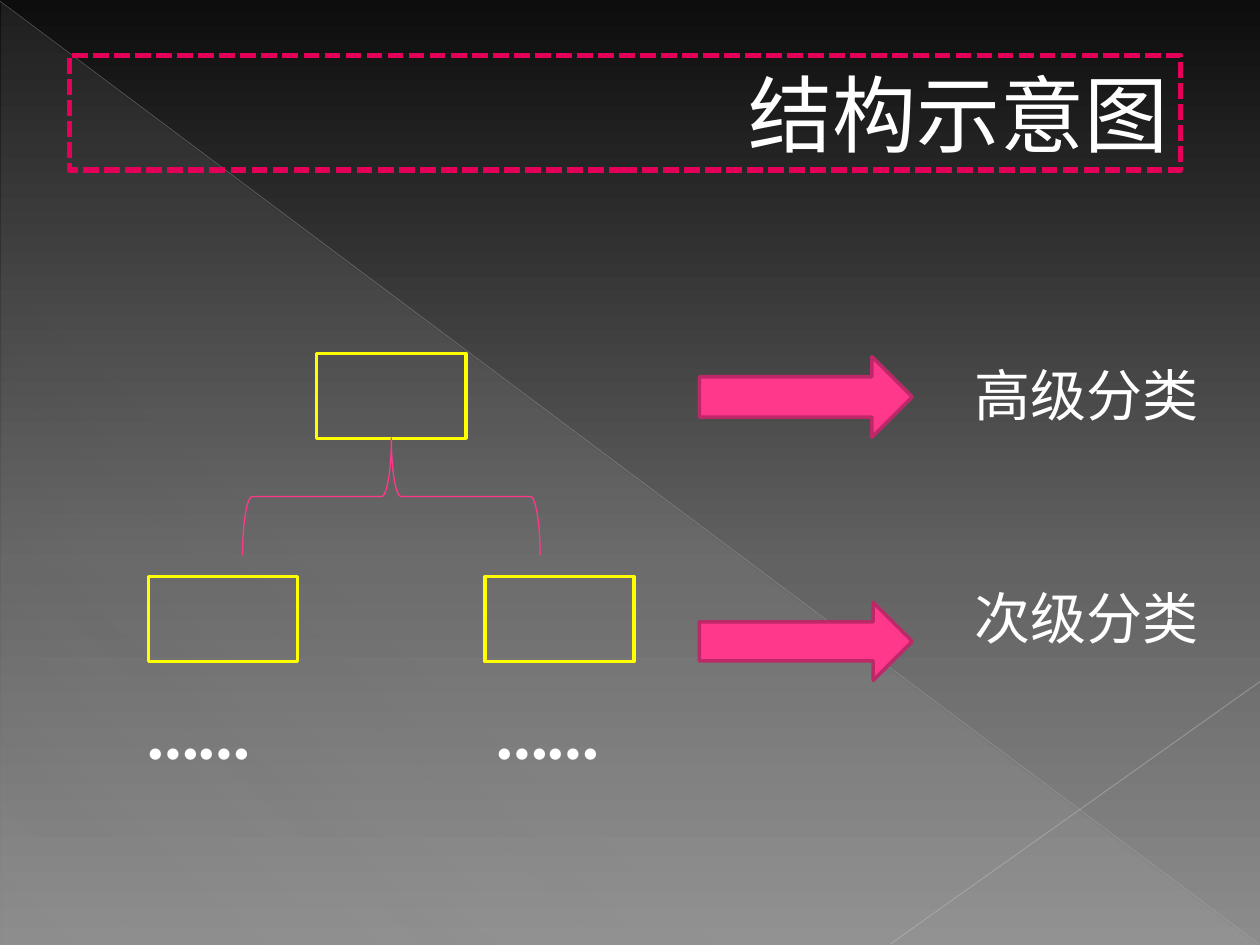
from lxml.etree import SubElement
from pptx import Presentation
from pptx.dml.color import RGBColor
from pptx.enum.dml import MSO_LINE
from pptx.enum.shapes import MSO_CONNECTOR, MSO_SHAPE
from pptx.enum.text import MSO_ANCHOR, PP_ALIGN
from pptx.oxml.ns import qn
from pptx.util import Pt

WHITE = RGBColor(0xFF, 0xFF, 0xFF)
YELLOW = RGBColor(0xFF, 0xFF, 0x00)
PINK = RGBColor(0xFF, 0x38, 0x8C)
DARK_PINK = RGBColor(0xBD, 0x29, 0x68)
CRIMSON = RGBColor(0xE4, 0x00, 0x59)
SILVER = RGBColor(0xBF, 0xBF, 0xBF)
LIGHT_SILVER = RGBColor(0xC6, 0xC6, 0xC6)
PALE = RGBColor(0xD2, 0xD2, 0xD2)

# position %, colour, opacity %
BACKGROUND = [(0, RGBColor(0x0D, 0x0D, 0x0D), 100),
              (60, RGBColor(0x62, 0x62, 0x62), 100),
              (100, RGBColor(0x8C, 0x8C, 0x8C), 100)]
SHEEN = [(0, PALE, 10), (70, PALE, 8), (100, PALE, 1)]

# start, end, colour, width, opacity %
DIAGONALS = [((0, 0.7), (719.3, 539.3), SILVER, 0.39, 35),
             ((720, 389.5), (509, 539.3), LIGHT_SILVER, 0.47, 45)]

TITLE = "结构示意图"
TITLE_FRAME = (39.6, 31.7, 635, 65.5)
BOX_W, BOX_H = 85.2, 48.5
LEFT_X, RIGHT_X = 84.8, 277.2
TOP_Y, LOWER_Y = 202, 329.5
BOXES = [(LEFT_X, LOWER_Y), (RIGHT_X, LOWER_Y),
         ((LEFT_X + RIGHT_X) / 2, TOP_Y)]
BRACE = (190.1, 198.7, 67, 170)
ARROWS = [(399.6, 203.8, 121.7, 46.1), (399.6, 344.2, 121.7, 44.6)]

# text, frame, size, font, bold
LABELS = [("高级分类", (550, 202.3, 145, 46), 32, "Noto Sans CJK SC", False),
          ("次级分类", (550, 329.8, 167, 46), 32, "Noto Sans CJK SC", False),
          ("……", (77, 394.6, 104.4, 51), 36, "League Spartan", True),
          ("……", (276.5, 394.6, 87, 51), 36, "League Spartan", True)]


def set_opacity(parent, percent):
    for color in parent.iter(qn("a:srgbClr")):
        SubElement(color, qn("a:alpha"), val=str(percent * 1000))


def set_gradient(fill, owner, stops, angle):
    """Fill with any number of stops; angle is clockwise from left to right."""
    fill.gradient()
    grad = owner.find(".//" + qn("a:gradFill"))
    stop_list = grad.find(qn("a:gsLst"))
    for old in list(stop_list):
        stop_list.remove(old)
    for position, color, opacity in stops:
        stop = SubElement(stop_list, qn("a:gs"), pos=str(position * 1000))
        SubElement(stop, qn("a:srgbClr"), val=str(color))
        if opacity < 100:
            set_opacity(stop, opacity)
    lin = grad.find(qn("a:lin"))
    lin.set("ang", str(angle * 60000))
    lin.set("scaled", "0")


def add_shape(s, kind, frame, fill=None, line=None, width=0):
    sp = s.shapes.add_shape(kind, *map(Pt, frame))
    sp.shadow.inherit = False
    if fill is None:
        sp.fill.background()
    else:
        sp.fill.solid()
        sp.fill.fore_color.rgb = fill
    if line is None:
        sp.line.fill.background()
    else:
        sp.line.color.rgb = line
        sp.line.width = Pt(width)
    return sp


def add_diagonal(s, start, end, color, width, opacity):
    line = s.shapes.add_connector(MSO_CONNECTOR.STRAIGHT, *map(Pt, start + end))
    line.line.color.rgb = color
    line.line.width = Pt(width)
    spPr = line._element.spPr
    set_opacity(spPr, opacity)
    SubElement(spPr, qn("a:effectLst"))


def write(sp, text, size, font, bold=False, align=PP_ALIGN.LEFT):
    tf = sp.text_frame
    tf.text = text
    p = tf.paragraphs[0]
    p.alignment = align
    r = p.runs[0]
    r.font.size = Pt(size)
    r.font.bold = bold
    r.font.name = font
    r.font.color.rgb = WHITE
    SubElement(r.font._element, qn("a:ea"), typeface=font)


def main():
    prs = Presentation()
    prs.slide_width, prs.slide_height = Pt(720), Pt(540)
    s = prs.slides.add_slide(prs.slide_layouts[6])
    set_gradient(s.background.fill, s._element, BACKGROUND, 90)

    sheen = add_shape(s, MSO_SHAPE.RIGHT_TRIANGLE, (0.7, 1.4, 718.6, 538.6))
    set_gradient(sheen.fill, sheen._element, SHEEN, 133)
    for diagonal in DIAGONALS:
        add_diagonal(s, *diagonal)

    title = add_shape(s, MSO_SHAPE.RECTANGLE, TITLE_FRAME, line=CRIMSON, width=3)
    title.line.dash_style = MSO_LINE.SQUARE_DOT
    title.text_frame.vertical_anchor = MSO_ANCHOR.MIDDLE
    write(title, TITLE, 48, "Noto Sans CJK JP", align=PP_ALIGN.RIGHT)

    for x, y in BOXES:
        add_shape(s, MSO_SHAPE.RECTANGLE, (x, y, BOX_W, BOX_H), line=YELLOW, width=2)
    brace = add_shape(s, MSO_SHAPE.LEFT_BRACE, BRACE, line=PINK, width=0.75)
    brace.rotation = 90
    for frame in ARROWS:
        add_shape(s, MSO_SHAPE.RIGHT_ARROW, frame, PINK, DARK_PINK, 2)

    for text, frame, size, font, bold in LABELS:
        label = s.shapes.add_textbox(*map(Pt, frame))
        label.text_frame.word_wrap = True
        write(label, text, size, font, bold)

    prs.save("out.pptx")


if __name__ == "__main__":
    main()
